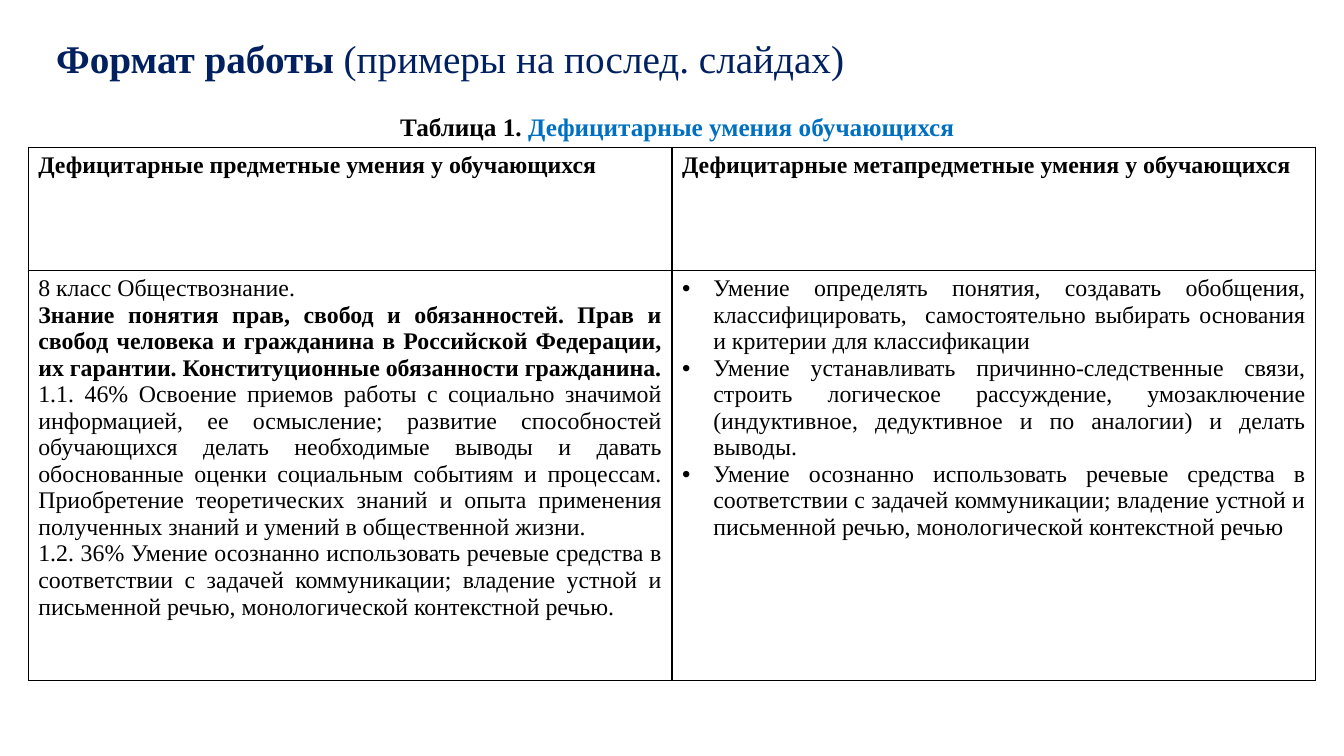
from lxml.etree import SubElement
from pptx import Presentation
from pptx.dml.color import RGBColor
from pptx.enum.text import MSO_AUTO_SIZE, PP_ALIGN
from pptx.oxml.ns import qn
from pptx.util import Inches, Pt

W, H = 13.33, 7.5
FONT = "Times New Roman"
BLACK, NAVY, BLUE = "000000", "002060", "0070C0"

HEADERS = ["Дефицитарные предметные умения у обучающихся",
           "Дефицитарные метапредметные умения у обучающихся"]
SUBJECT_SKILLS = [
    ("8 класс Обществознание.", False),
    ("Знание понятия прав, свобод и обязанностей. Прав и свобод человека и гражданина "
     "в Российской Федерации, их гарантии. Конституционные обязанности гражданина.", True),
    ("1.1. 46% Освоение приемов работы с социально значимой информацией, ее осмысление; "
     "развитие способностей обучающихся делать необходимые выводы и давать обоснованные "
     "оценки социальным событиям и процессам. Приобретение теоретических знаний и опыта "
     "применения полученных знаний и умений в общественной жизни. ", False),
    ("1.2. 36% Умение осознанно использовать речевые средства в соответствии с задачей "
     "коммуникации; владение устной и письменной речью, монологической контекстной речью.",
     False),
]
META_SKILLS = [
    "Умение определять понятия, создавать обобщения, классифицировать,  самостоятельно "
    "выбирать основания и критерии для классификации",
    "Умение устанавливать причинно-следственные связи, строить логическое рассуждение, "
    "умозаключение (индуктивное, дедуктивное и по аналогии) и делать выводы.",
    "Умение осознанно использовать речевые средства в соответствии с задачей коммуникации; "
    "владение устной и письменной речью, монологической контекстной речью",
]


def rgb(value):
    return RGBColor.from_string(value)


def add_run(p, text, size=17, color=BLACK, bold=False):
    r = p.add_run()
    r.text = text
    r.font.name, r.font.size, r.font.bold = FONT, Pt(size), bold
    r.font.color.rgb = rgb(color)


def add_line(s, box, runs, size, wrap):
    tf = s.shapes.add_textbox(*map(Inches, box)).text_frame
    tf.word_wrap = wrap
    tf.auto_size = MSO_AUTO_SIZE.SHAPE_TO_FIT_TEXT
    for text, color, bold in runs:
        add_run(tf.paragraphs[0], text, size=size, color=color, bold=bold)


def set_bullet(p, indent=0.31):
    pPr = p._p.get_or_add_pPr()
    pPr.set("marL", str(Inches(indent)))
    pPr.set("indent", str(-Inches(indent)))
    SubElement(pPr, qn("a:buFont"), typeface="Arial")
    SubElement(pPr, qn("a:buChar"), char="•")


def set_borders(cell, color=BLACK, width=1):
    tcPr = cell._tc.get_or_add_tcPr()
    for i, side in enumerate(("lnL", "lnR", "lnT", "lnB")):
        ln = tcPr.makeelement(qn(f"a:{side}"), {"w": str(Pt(width))})
        SubElement(SubElement(ln, qn("a:solidFill")), qn("a:srgbClr"), val=color)
        tcPr.insert(i, ln)


def fill_cell(cell, items, bullets=False):
    cell.fill.background()
    set_borders(cell)
    tf = cell.text_frame
    for i, (text, bold) in enumerate(items):
        p = tf.add_paragraph() if i else tf.paragraphs[0]
        p.alignment = PP_ALIGN.JUSTIFY
        if bullets:
            set_bullet(p)
        add_run(p, text, bold=bold)


def add_skills_table(s, box, header_height):
    x, y, w, h = box
    table = s.shapes.add_table(2, 2, *map(Inches, box)).table
    table.first_row = table.horz_banding = False
    for col in table.columns:
        col.width = Inches(w / 2)
    for row, height in zip(table.rows, (header_height, h - header_height)):
        row.height = Inches(height)
    for i, text in enumerate(HEADERS):
        fill_cell(table.cell(0, i), [(text, True)])
    fill_cell(table.cell(1, 0), SUBJECT_SKILLS)
    fill_cell(table.cell(1, 1), [(text, False) for text in META_SKILLS], bullets=True)


def main():
    prs = Presentation()
    prs.slide_width, prs.slide_height = Inches(W), Inches(H)
    s = prs.slides.add_slide(prs.slide_layouts[6])
    add_line(s, (0.46, 0.29, 11.86, 0.57),
             [("Формат работы ", NAVY, True), ("(примеры на послед. слайдах)", NAVY, False)],
             size=28, wrap=True)
    add_line(s, (3.87, 1.06, 5.75, 0.4),
             [("Таблица 1. ", BLACK, True), ("Дефицитарные умения обучающихся", BLUE, True)],
             size=18, wrap=False)
    add_skills_table(s, (0.28, 1.46, 12.77, 5.29), header_height=1.22)
    prs.save("out.pptx")


if __name__ == "__main__":
    main()
